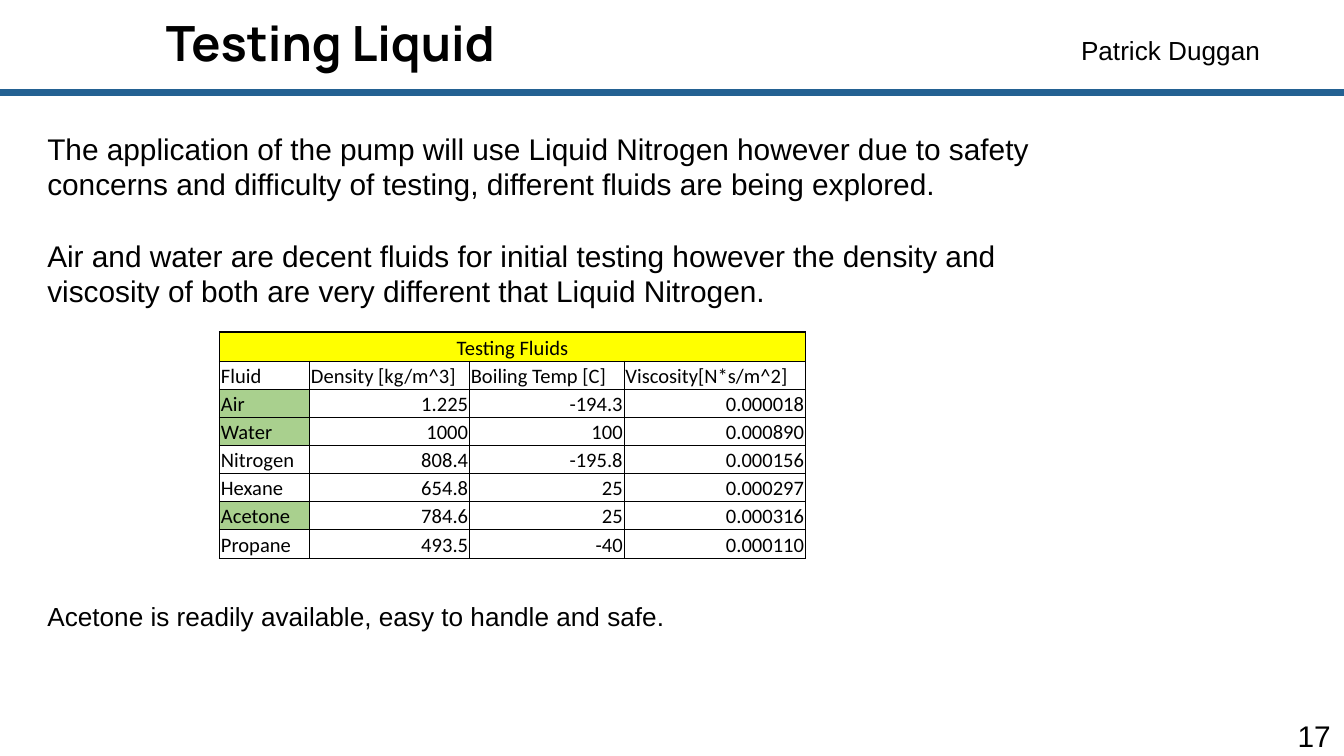
"""Build the slide on testing liquids, with lengths as percent of the slide's size."""
import pptx
import pptx.dml.color
import pptx.enum.shapes
import pptx.enum.text
import pptx.oxml.ns
import pptx.util
from lxml import etree

hues = {"ink": "000000", "rule": "236192", "head": "FFFF00", "pick": "A9D08E"}
align = pptx.enum.text.PP_ALIGN
anchor = pptx.enum.text.MSO_ANCHOR
color = pptx.dml.color.RGBColor.from_string
inch = pptx.util.Inches

deck = pptx.Presentation()
deck.slide_width = inch(10)
deck.slide_height = deck.slide_width * 9 // 16
slide = deck.slides.add_slide(deck.slide_layouts[6])


def place(*shares):
    sizes = (deck.slide_width, deck.slide_height) * 2
    return [round(share * size / 100) for share, size in zip(shares, sizes)]


def write(para, text, size, font="Arial", bold=False, side=align.LEFT):
    para.alignment = side
    run = para.add_run()
    run.text = text
    run.font.size, run.font.name, run.font.bold = pptx.util.Pt(size), font, bold
    run.font.color.rgb = color(hues["ink"])


left, top, right, base = place(0, 12.27, 100, 12.27)
rule = slide.shapes.add_connector(
    pptx.enum.shapes.MSO_CONNECTOR.STRAIGHT, left, top, right, base)
rule.line.color.rgb = color(hues["rule"])
rule.line.width = pptx.util.Pt(3.5)
etree.SubElement(rule.element.spPr, pptx.oxml.ns.qn("a:effectLst"))

texts = [
    ((95, 94.66, 5, 5.34), 0.05, anchor.MIDDLE, ["17"], (16, "Arial", False, align.RIGHT)),
    ((0, 0, 49.2, 11.56), 0.1, anchor.TOP, ["Testing Liquid"],
     (26, "Manrope", True, align.CENTER)),
    ((79.45, 2.76, 15.8, 7.29), 0.1, anchor.TOP, ["Patrick Duggan"], (14,)),
    ((2.54, 16.35, 75.3, 34.13), 0.05, anchor.TOP, [
        "The application of the pump will use Liquid Nitrogen however due to safety "
        "concerns and difficulty of testing, different fluids are being explored.",
        "Air and water are decent fluids for initial testing however the density and "
        "viscosity of both are very different that Liquid Nitrogen."], (16,)),
    ((2.54, 70, 81.1, 14.4), 0.05, anchor.BOTTOM,
     ["Acetone is readily available, easy to handle and safe."], (14,)),
]
for spot, pad, hold, lines, style in texts:
    frame = slide.shapes.add_textbox(*place(*spot)).text_frame
    frame.word_wrap = True
    frame.vertical_anchor = hold
    frame.margin_left = frame.margin_right = inch(0.1)
    frame.margin_top = frame.margin_bottom = inch(pad)
    for i, line in enumerate(lines):
        para = frame.add_paragraph() if i else frame.paragraphs[0]
        para.space_before = pptx.util.Pt(19 if i else 0)
        write(para, line, *style)

fluids = [
    ["Testing Fluids", "", "", ""],
    ["Fluid", "Density [kg/m^3]", "Boiling Temp [C]", "Viscosity[N*s/m^2]"],
    ["Air", "1.225", "-194.3", "0.000018"],
    ["Water", "1000", "100", "0.000890"],
    ["Nitrogen", "808.4", "-195.8", "0.000156"],
    ["Hexane", "654.8", "25", "0.000297"],
    ["Acetone", "784.6", "25", "0.000316"],
    ["Propane", "493.5", "-40", "0.000110"],
]
last, end = len(fluids) - 1, len(fluids[0]) - 1
table = slide.shapes.add_table(
    last + 1, end + 1, *place(16.34, 43.9, 43.6, 30)).table
table.first_row = table.horz_banding = False
for col, share in zip(table.columns, (6.7, 11.9, 11.5, 13.5)):
    col.width = place(share)[0]
for r, row in enumerate(table.rows):
    row.height = place(0, 3.9 if r in (0, last) else 3.7)[1]
table.cell(0, 0).merge(table.cell(0, end))

for r, row in enumerate(fluids):
    for c, text in enumerate(row):
        cell = table.cell(r, c)
        cell.vertical_anchor = anchor.BOTTOM
        cell.margin_left = cell.margin_right = cell.margin_top = inch(0.01)
        cell.margin_bottom = 0
        thick = {"L": c == 0, "R": c == end, "T": r < 2, "B": r in (0, last)}
        props = cell._tc.get_or_add_tcPr()
        for side, bold in thick.items():
            edge = etree.SubElement(props, pptx.oxml.ns.qn("a:ln" + side),
                                    w=str(pptx.util.Pt(1 if bold else 0.5)))
            paint = etree.SubElement(edge, pptx.oxml.ns.qn("a:solidFill"))
            etree.SubElement(paint, pptx.oxml.ns.qn("a:srgbClr"), val=hues["ink"])
        hue = "head" if r == 0 else "pick" if text in ("Air", "Water", "Acetone") else None
        if hue:
            cell.fill.solid()
            cell.fill.fore_color.rgb = color(hues[hue])
        else:
            cell.fill.background()
        if text:
            side = align.CENTER if r == 0 else align.RIGHT if r > 1 and c else align.LEFT
            write(cell.text_frame.paragraphs[0], text, 11, "Calibri", side=side)

deck.save("out.pptx")
